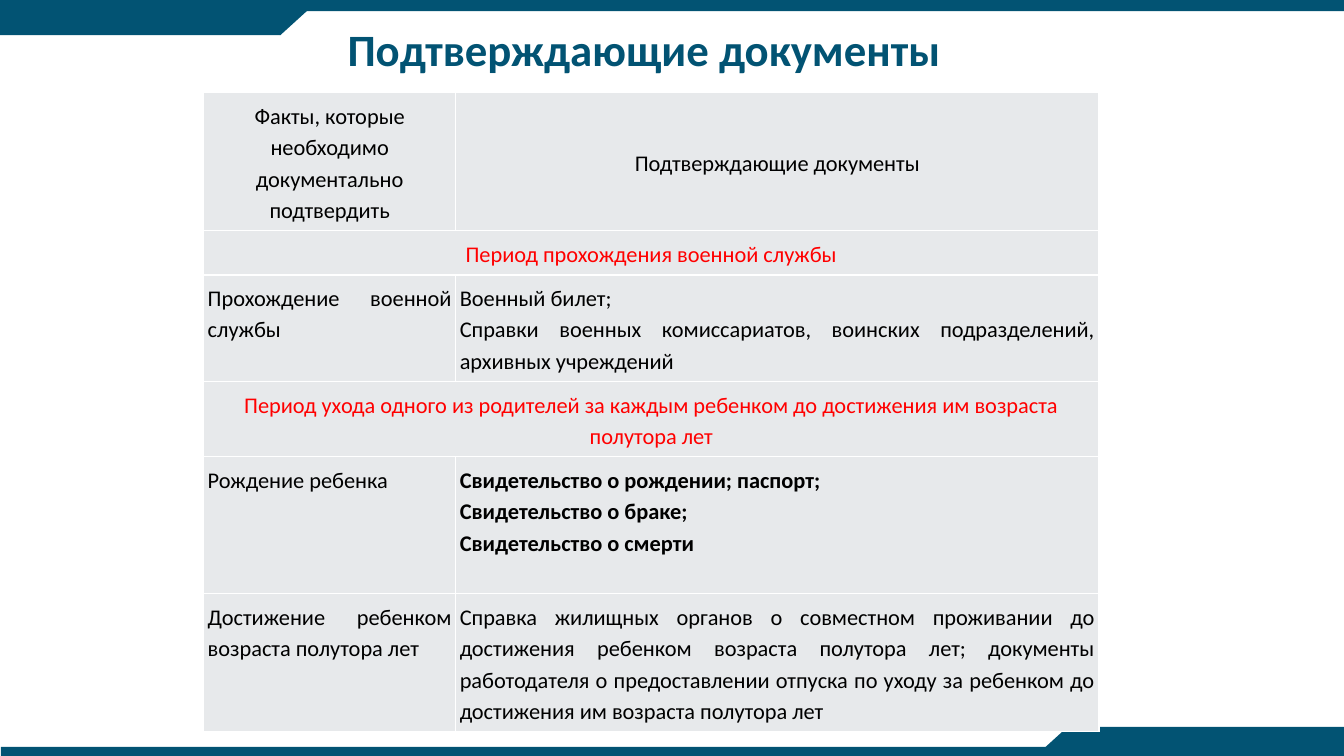
import pptx
import pptx.util
import pptx.dml.color
import pptx.enum.shapes
import pptx.enum.text

Inches = pptx.util.Inches
Pt = pptx.util.Pt
SHAPE = pptx.enum.shapes.MSO_SHAPE
ALIGN = pptx.enum.text.PP_ALIGN
ANCHOR = pptx.enum.text.MSO_ANCHOR

TEAL, BLACK, RED, GREY = "025373", "000000", "FF0000", "E7E9EB"


def color(value):
    return pptx.dml.color.RGBColor.from_string(value)


def format_paragraph(paragraph, alignment, spacing, font_color, font_format):
    paragraph.alignment = alignment
    paragraph.line_spacing = spacing
    for name, value in font_format.items():
        setattr(paragraph.font, name, value)
    paragraph.font.color.rgb = color(font_color)


presentation = pptx.Presentation()
presentation.slide_width = Inches(13.33)
presentation.slide_height = Inches(7.5)
slide = presentation.slides.add_slide(presentation.slide_layouts[5])

bars = [
    (SHAPE.RECTANGLE, 0, 0, 13.33, 0.11, 0),
    (SHAPE.RECTANGLE, 0.01, 7.41, 13.32, 0.09, 0),
    (SHAPE.RECTANGLE, 0, 0.05, 2.78, 0.3, 0),
    (SHAPE.FLOWCHART_MERGE, 2.45, 0.05, 0.66, 0.3, 0),
    (SHAPE.RECTANGLE, 10.59, 7.21, 2.74, 0.29, 0),
    (SHAPE.FLOWCHART_MERGE, 10.26, 7.21, 0.66, 0.3, 180),
]
for kind, left, top, width, height, rotation in bars:
    shape = slide.shapes.add_shape(kind, Inches(left), Inches(top), Inches(width), Inches(height))
    shape.rotation = rotation
    shape.shadow.inherit = False
    shape.fill.solid()
    shape.fill.fore_color.rgb = color(TEAL)
    shape.line.fill.background()

title = slide.shapes.title
title_place = {"left": 0.64, "top": 0.08, "width": 11.5, "height": 0.87}
for name, value in title_place.items():
    setattr(title, name, Inches(value))
title.text_frame.text = "Подтверждающие документы"
title.text_frame.vertical_anchor = ANCHOR.MIDDLE
title_font = {"name": "Calibri", "size": Pt(32), "bold": True}
format_paragraph(title.text_frame.paragraphs[0], ALIGN.CENTER, 0.9, TEAL, title_font)

rows = [
    (1.34, ["Факты, которые необходимо документально подтвердить", "Подтверждающие документы"]),
    (0.44, ["Период прохождения военной службы"]),
    (1.04, ["Прохождение военной службы",
            "Военный билет;\nСправки военных комиссариатов, воинских подразделений, архивных учреждений"]),
    (0.73, ["Период ухода одного из родителей за каждым ребенком до достижения им возраста полутора лет"]),
    (1.36, ["Рождение ребенка",
            "Свидетельство о рождении; паспорт;\nСвидетельство о браке;\nСвидетельство о смерти"]),
    (1.34, ["Достижение ребенком возраста полутора лет",
            "Справка жилищных органов о совместном проживании до достижения ребенком возраста "
            "полутора лет; документы работодателя о предоставлении отпуска по уходу за ребенком "
            "до достижения им возраста полутора лет"]),
]
column_widths = [2.5, 6.38]
bold_cell = (4, 1)
cell_format = {
    "margin_left": Inches(0.04),
    "margin_right": Inches(0.04),
    "margin_top": Inches(0.06),
    "margin_bottom": Inches(0.06),
}

table = slide.shapes.add_table(
    len(rows), len(column_widths), Inches(2.02), Inches(0.92),
    Inches(sum(column_widths)), Inches(sum(height for height, texts in rows))).table
table.first_row = False
table.horz_banding = False
for column, width in zip(table.columns, column_widths):
    column.width = Inches(width)

for row_index, (height, texts) in enumerate(rows):
    table.rows[row_index].height = Inches(height)
    is_section = len(texts) == 1
    is_header = row_index == 0
    if is_section:
        table.cell(row_index, 0).merge(table.cell(row_index, 1))
    for column_index, text in enumerate(texts):
        cell = table.cell(row_index, column_index)
        cell.text = text
        cell.fill.solid()
        cell.fill.fore_color.rgb = color(GREY)
        cell.vertical_anchor = ANCHOR.MIDDLE if is_header else ANCHOR.TOP
        for name, value in cell_format.items():
            setattr(cell, name, value)
        alignment = ALIGN.CENTER if is_header or is_section else ALIGN.JUSTIFY
        font_color = RED if is_section else BLACK
        font_format = {"name": "Calibri", "size": Pt(16),
                       "bold": (row_index, column_index) == bold_cell}
        for paragraph in cell.text_frame.paragraphs:
            format_paragraph(paragraph, alignment, 1.15, font_color, font_format)

presentation.save("out.pptx")
